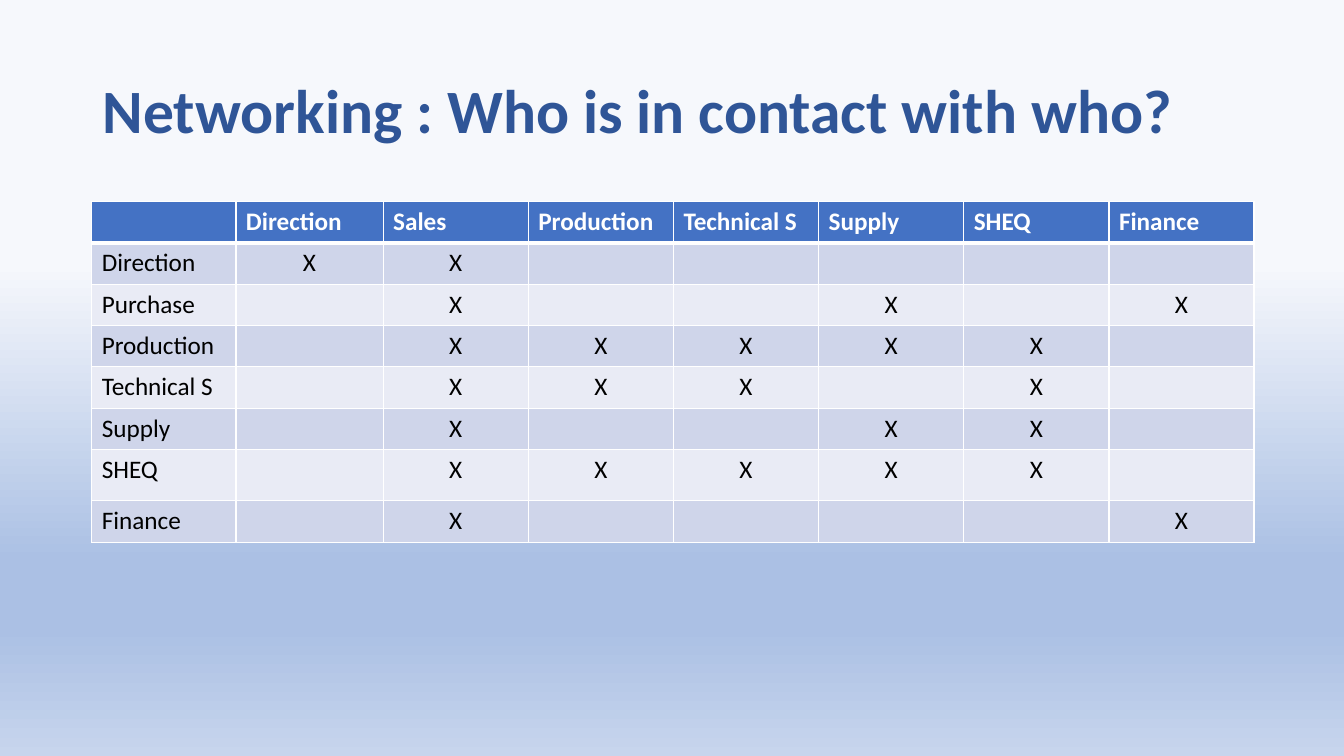
import pptx
import pptx.util
import pptx.dml.color
import pptx.enum.text
import pptx.oxml
import pptx.oxml.ns
from lxml import etree

Inches, Pt = pptx.util.Inches, pptx.util.Pt
RGBColor = pptx.dml.color.RGBColor
PP_ALIGN, MSO_ANCHOR = pptx.enum.text.PP_ALIGN, pptx.enum.text.MSO_ANCHOR
qn = pptx.oxml.ns.qn

FONT = "Calibri"
WHITE = RGBColor(0xFF, 0xFF, 0xFF)
BLACK = RGBColor(0, 0, 0)
TITLE_BLUE = RGBColor(0x2F, 0x55, 0x97)
HEADER_BLUE = RGBColor(0x44, 0x72, 0xC4)
BAND_DARK = RGBColor(0xCF, 0xD5, 0xEA)
BAND_LIGHT = RGBColor(0xE9, 0xEB, 0xF5)
BACKGROUND_STOPS = [
    (35, RGBColor(0xF6, 0xF8, 0xFC)),
    (74, RGBColor(0xAB, 0xC0, 0xE4)),
    (83, RGBColor(0xAB, 0xC0, 0xE4)),
    (100, RGBColor(0xC7, 0xD5, 0xED)),
]

DEPARTMENTS = ["Direction", "Sales", "Production", "Technical S",
               "Supply", "SHEQ", "Finance"]
CONTACTS = {
    "Direction": ["Direction", "Sales"],
    "Purchase": ["Sales", "Supply", "Finance"],
    "Production": ["Sales", "Production", "Technical S", "Supply", "SHEQ"],
    "Technical S": ["Sales", "Production", "Technical S", "SHEQ"],
    "Supply": ["Sales", "Supply", "SHEQ"],
    "SHEQ": ["Sales", "Production", "Technical S", "Supply", "SHEQ"],
    "Finance": ["Sales", "Finance"],
}
COLUMN_WIDTHS = [1.43, 1.46] + [1.44] * 6
ROW_HEIGHTS = [0.41] * 6 + [0.51, 0.41]


def paint_background(s):
    fill = s.background.fill
    fill.gradient()
    fill.gradient_angle = 270
    stops = s.background._cSld.find(".//" + qn("a:gsLst"))
    for stop in list(stops):
        stops.remove(stop)
    for percent, color in BACKGROUND_STOPS:
        stop = etree.SubElement(stops, qn("a:gs"), pos=str(percent * 1000))
        etree.SubElement(stop, qn("a:srgbClr"), val=str(color))


def format_text(p, size, color, bold):
    for r in p.runs:
        r.font.name = FONT
        r.font.size = Pt(size)
        r.font.color.rgb = color
        r.font.bold = bold


def add_title(s, left, top, width, height):
    tf = s.shapes.add_textbox(Inches(left), Inches(top),
                              Inches(width), Inches(height)).text_frame
    tf.word_wrap = True
    tf.vertical_anchor = MSO_ANCHOR.MIDDLE
    tf.text = "Networking : Who is in contact with who?"
    tf.paragraphs[0].line_spacing = 0.9
    format_text(tf.paragraphs[0], 44, TITLE_BLUE, True)


def set_borders(cell, **widths):
    """Draw white borders; widths in points are keyed L, R, T and B."""
    tcPr = cell._tc.get_or_add_tcPr()
    for side, width in widths.items():
        ln = etree.SubElement(tcPr, qn("a:ln" + side), w=str(Pt(width)))
        fill = etree.SubElement(ln, qn("a:solidFill"))
        etree.SubElement(fill, qn("a:srgbClr"), val=str(WHITE))


def add_contact_table(s, left, top, width, height):
    rows = [[""] + DEPARTMENTS]
    for name, contacts in CONTACTS.items():
        rows.append([name] + ["X" if d in contacts else "" for d in DEPARTMENTS])
    table = s.shapes.add_table(len(rows), len(rows[0]), Inches(left), Inches(top),
                               Inches(width), Inches(height)).table
    for column, column_width in zip(table.columns, COLUMN_WIDTHS):
        column.width = Inches(column_width)
    for row, row_height in zip(table.rows, ROW_HEIGHTS):
        row.height = Inches(row_height)

    for i, row in enumerate(rows):
        header = i == 0
        band = HEADER_BLUE if header else BAND_DARK if i % 2 else BAND_LIGHT
        for j, text in enumerate(row):
            cell = table.cell(i, j)
            set_borders(cell, L=1, R=1, T=3 if i == 1 else 1, B=3 if header else 1)
            cell.fill.solid()
            cell.fill.fore_color.rgb = band
            cell.text_frame.text = text
            p = cell.text_frame.paragraphs[0]
            if not header and j > 0:
                p.alignment = PP_ALIGN.CENTER
            format_text(p, 18, WHITE if header else BLACK, header)


def main():
    prs = pptx.Presentation()
    prs.slide_width, prs.slide_height = Inches(13.33), Inches(7.5)
    s = prs.slides.add_slide(prs.slide_layouts[6])
    paint_background(s)
    add_title(s, 0.92, 0.4, 11.5, 1.45)
    add_contact_table(s, 0.91, 2, 11.51, 3.35)
    prs.save("out.pptx")


if __name__ == "__main__":
    main()
